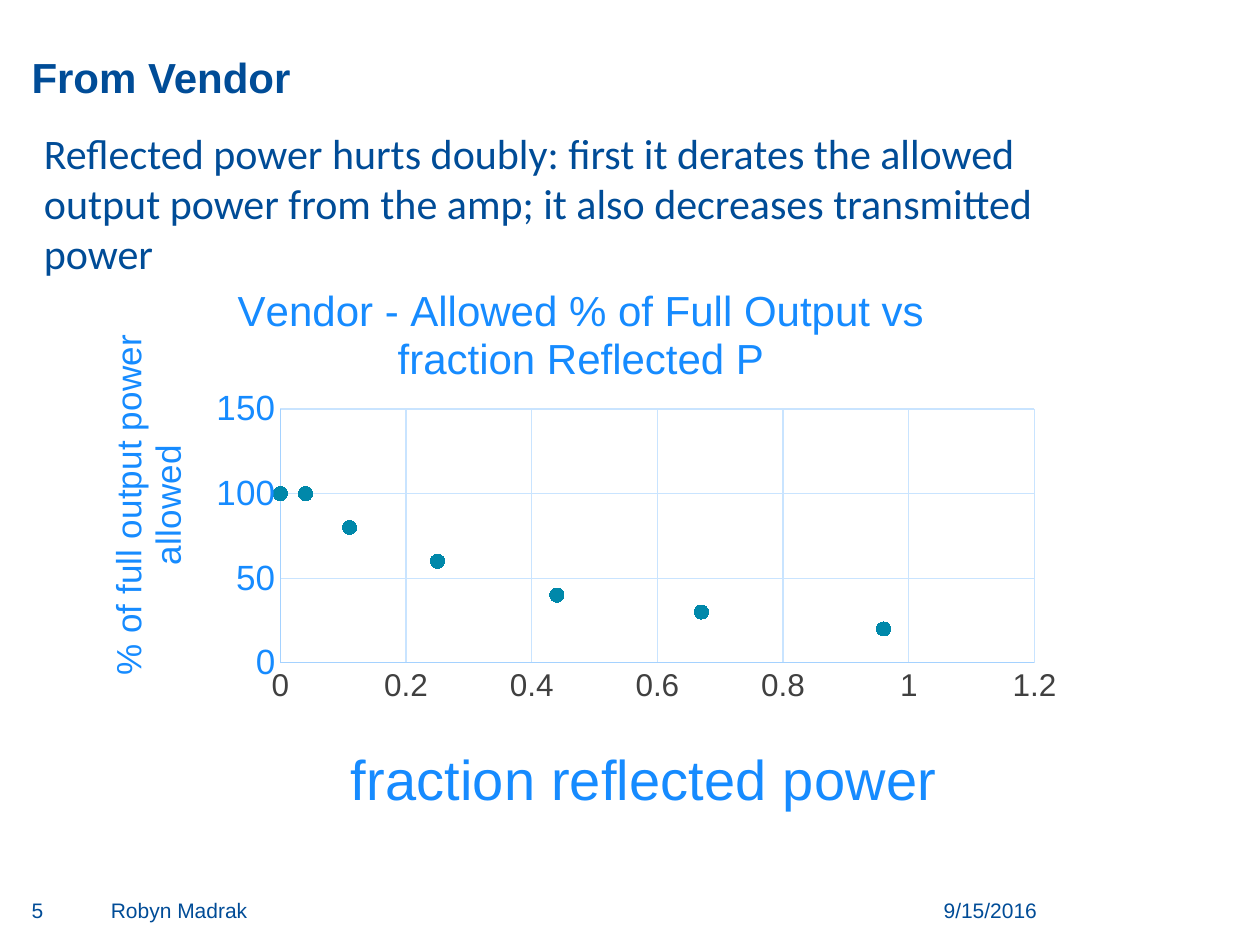
from lxml.etree import SubElement
from pptx import Presentation
from pptx.chart.data import XyChartData
from pptx.dml.color import RGBColor
from pptx.enum.chart import XL_CHART_TYPE, XL_MARKER_STYLE, XL_TICK_MARK
from pptx.enum.text import MSO_ANCHOR, PP_ALIGN
from pptx.oxml.ns import qn
from pptx.util import Inches, Pt

TITLE = "From Vendor"
BODY = ("Reflected power hurts doubly: first it derates the allowed output power "
        "from the amp; it also decreases transmitted power")
FOOTERS = [
    ("5", 0.25, 0.49, PP_ALIGN.LEFT),
    ("Robyn Madrak", 0.88, 5.88, PP_ALIGN.LEFT),
    ("9/15/2016", 7.05, 1.18, PP_ALIGN.RIGHT),
]
CHART_TITLE = "Vendor - Allowed % of Full Output vs fraction Reflected P"
X_TITLE = "fraction reflected power"
Y_TITLE = "% of full output power allowed"
POINTS = [(0, 100), (0.04, 100), (0.11, 80), (0.25, 60),
          (0.44, 40), (0.67, 30), (0.96, 20)]

THEME = {
    "heading_font": "Arial", "body_font": "Calibri",
    "navy": "004C97", "blue": "168BFF", "teal": "0088AA", "grey": "404040",
    "axis": "A5D2FF", "grid": "C9E4FF",
    "title": 24, "body": 24, "footer": 12, "chart_title": 24,
    "x_title": 32, "y_title": 20, "x_tick": 18, "y_tick": 20,
}


def color(name):
    return RGBColor.from_string(THEME[name])


def style(font, size, tint, face="heading_font", bold=False):
    font.name = THEME[face]
    font.size = Pt(THEME[size])
    font.color.rgb = color(tint)
    font.bold = bold


def write(frame, text, size, align=PP_ALIGN.LEFT, face="heading_font", bold=False, inset=0):
    frame.word_wrap = True
    frame.margin_left = frame.margin_right = Inches(inset)
    frame.margin_top = frame.margin_bottom = Inches(inset / 2)
    frame.text = text
    paragraph = frame.paragraphs[0]
    paragraph.alignment = align
    style(paragraph.runs[0].font, size, "navy", face, bold)


def place(element, index, **fractions):
    for old in element.findall(qn("c:layout")):
        element.remove(old)
    layout = SubElement(element, qn("c:layout"))
    element.insert(index, layout)
    manual = SubElement(layout, qn("c:manualLayout"))
    if "w" in fractions:
        SubElement(manual, qn("c:layoutTarget")).set("val", "inner")
    for side in ("x", "y"):
        SubElement(manual, qn(f"c:{side}Mode")).set("val", "edge")
    for side, value in fractions.items():
        SubElement(manual, qn(f"c:{side}")).set("val", str(value))


def add_chart_title(owner, text, size, x, y):
    frame = owner.text_frame
    frame.text = text
    style(frame.paragraphs[0].runs[0].font, size, "blue")
    title = frame._txBody.getparent().getparent()
    place(title, 1, x=x, y=y)


def format_axis(axis, maximum, step, size, tint):
    axis.minimum_scale, axis.maximum_scale, axis.major_unit = 0, maximum, step
    axis.major_tick_mark = axis.minor_tick_mark = XL_TICK_MARK.NONE
    axis.has_major_gridlines = True
    for line, name in ((axis.format.line, "axis"), (axis.major_gridlines.format.line, "grid")):
        line.color.rgb = color(name)
        line.width = Pt(0.75)
    style(axis.tick_labels.font, size, tint)
    axis.tick_labels.number_format = "General"
    axis.tick_labels.number_format_is_linked = False


def add_power_chart(page):
    data = XyChartData()
    series_data = data.add_series("Series 1")
    for fraction, allowed in POINTS:
        series_data.add_data_point(fraction, allowed)
    chart = page.shapes.add_chart(XL_CHART_TYPE.XY_SCATTER, Inches(0.55), Inches(2.01),
                                  Inches(7.98), Inches(4.58), data).chart
    chart.has_legend = False
    chart.font.name = THEME["heading_font"]
    chart.font.size = Pt(10)
    chart.font.color.rgb = color("navy")
    format_axis(chart.category_axis, 1.2, 0.2, "x_tick", "grey")
    format_axis(chart.value_axis, 150, 50, "y_tick", "blue")
    add_chart_title(chart.chart_title, CHART_TITLE, "chart_title", 0.16, 0.04)
    add_chart_title(chart.category_axis.axis_title, X_TITLE, "x_title", 0.27, 0.83)
    add_chart_title(chart.value_axis.axis_title, Y_TITLE, "y_title", 0.03, 0.13)
    plot = chart.plots[0]
    plot.vary_by_categories = False
    place(plot._element.getparent(), 0, x=0.21, y=0.27, w=0.75, h=0.44)
    series = plot.series[0]
    series.smooth = False
    series.format.line.fill.background()
    marker = series.marker
    marker.style, marker.size = XL_MARKER_STYLE.CIRCLE, 8
    marker.format.fill.solid()
    marker.format.fill.fore_color.rgb = color("teal")
    marker.format.line.color.rgb = color("teal")


def main():
    deck = Presentation()
    deck.slide_width, deck.slide_height = Inches(10), Inches(7.5)
    page = deck.slides.add_slide(deck.slide_layouts[5])

    title = page.shapes.title
    title.left, title.top, title.width, title.height = map(Inches, (0.25, 0.11, 9.5, 0.7))
    title.text_frame.vertical_anchor = MSO_ANCHOR.BOTTOM
    write(title.text_frame, TITLE, "title", bold=True)

    for text, left, width, align in FOOTERS:
        box = page.shapes.add_textbox(Inches(left), Inches(7.12), Inches(width), Inches(0.26))
        write(box.text_frame, text, "footer", align)

    add_power_chart(page)

    body = page.shapes.add_textbox(Inches(0.25), Inches(0.96), Inches(8.69), Inches(1.31))
    write(body.text_frame, BODY, "body", face="body_font", inset=0.1)

    deck.save("out.pptx")


if __name__ == "__main__":
    main()
